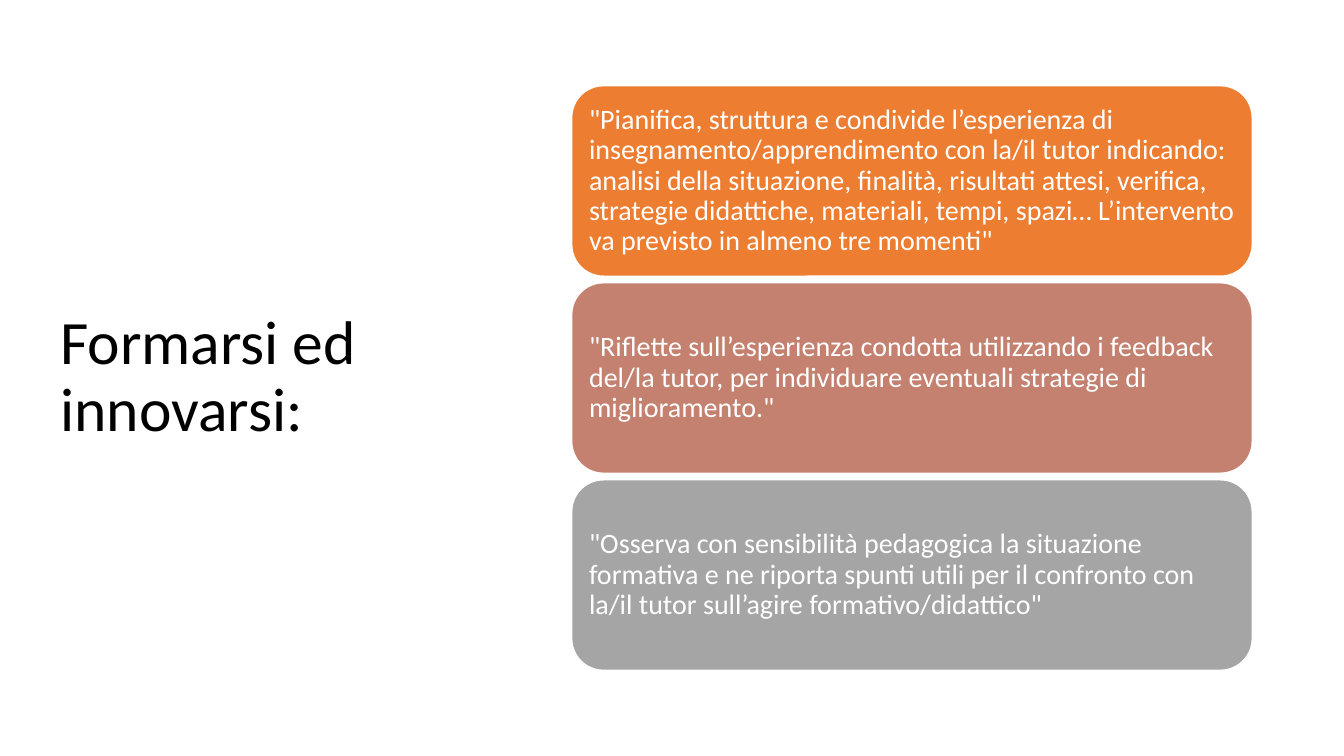
from pptx import Presentation
from pptx.dml.color import RGBColor
from pptx.enum.shapes import MSO_SHAPE as Shape
from pptx.enum.text import MSO_ANCHOR as Anchor, PP_ALIGN as Align
from pptx.util import Inches, Pt

FONT = "Calibri"
CARD_GAP = 0.065
CARDS = [
    ("ED7D31", "\"Pianifica, struttura e condivide l’esperienza di insegnamento/apprendimento "
               "con la/il tutor indicando: analisi della situazione, finalità, risultati attesi, "
               "verifica, strategie didattiche, materiali, tempi, spazi… "
               "L’intervento va previsto in almeno tre momenti\""),
    ("C48170", "\"Riflette sull’esperienza condotta utilizzando i feedback del/la tutor, "
               "per individuare eventuali strategie di miglioramento.\""),
    ("A5A5A5", "\"Osserva con sensibilità pedagogica la situazione formativa e ne riporta "
               "spunti utili per il confronto con la/il tutor sull’agire formativo/didattico\""),
]


def color(hex_value):
    return RGBColor.from_string(hex_value)


def write_text(shape, text, size, hex_value):
    frame = shape.text_frame
    frame.text = text
    frame.word_wrap = True
    frame.vertical_anchor = Anchor.MIDDLE
    paragraph = frame.paragraphs[0]
    paragraph.alignment = Align.LEFT
    paragraph.line_spacing = 0.9
    font = paragraph.runs[0].font
    font.name = FONT
    font.size = Pt(size)
    font.color.rgb = color(hex_value)


def add_title(slide, left, top, width, height):
    box = slide.shapes.add_textbox(Inches(left), Inches(top), Inches(width), Inches(height))
    write_text(box, "Formarsi ed innovarsi:", 44, "000000")


def add_card(slide, left, top, width, height, fill, text):
    card = slide.shapes.add_shape(
        Shape.ROUNDED_RECTANGLE, Inches(left), Inches(top), Inches(width), Inches(height))
    card.shadow.inherit = False
    card.fill.solid()
    card.fill.fore_color.rgb = color(fill)
    card.line.color.rgb = color("FFFFFF")
    card.line.width = Pt(1)
    write_text(card, text, 20, "FFFFFF")
    frame = card.text_frame
    frame.margin_left = frame.margin_right = Inches(0.08)
    frame.margin_top = frame.margin_bottom = Inches(0.08)


def add_card_stack(slide, left, top, width, height):
    # Equal cards share the height, less the gaps between them
    card_height = (height - CARD_GAP * (len(CARDS) - 1)) / len(CARDS)
    for index, (fill, text) in enumerate(CARDS):
        card_top = top + index * (card_height + CARD_GAP)
        add_card(slide, left, card_top, width, card_height, fill, text)


def main():
    presentation = Presentation()
    presentation.slide_width = Inches(13.33)
    presentation.slide_height = Inches(7.5)
    slide = presentation.slides.add_slide(presentation.slide_layouts[6])

    # Title on the left, cards on the right
    add_title(slide, 0.5, 0.61, 4.97, 6.28)
    add_card_stack(slide, 5.67, 0.85, 6.75, 5.8)
    presentation.save("out.pptx")


if __name__ == "__main__":
    main()
